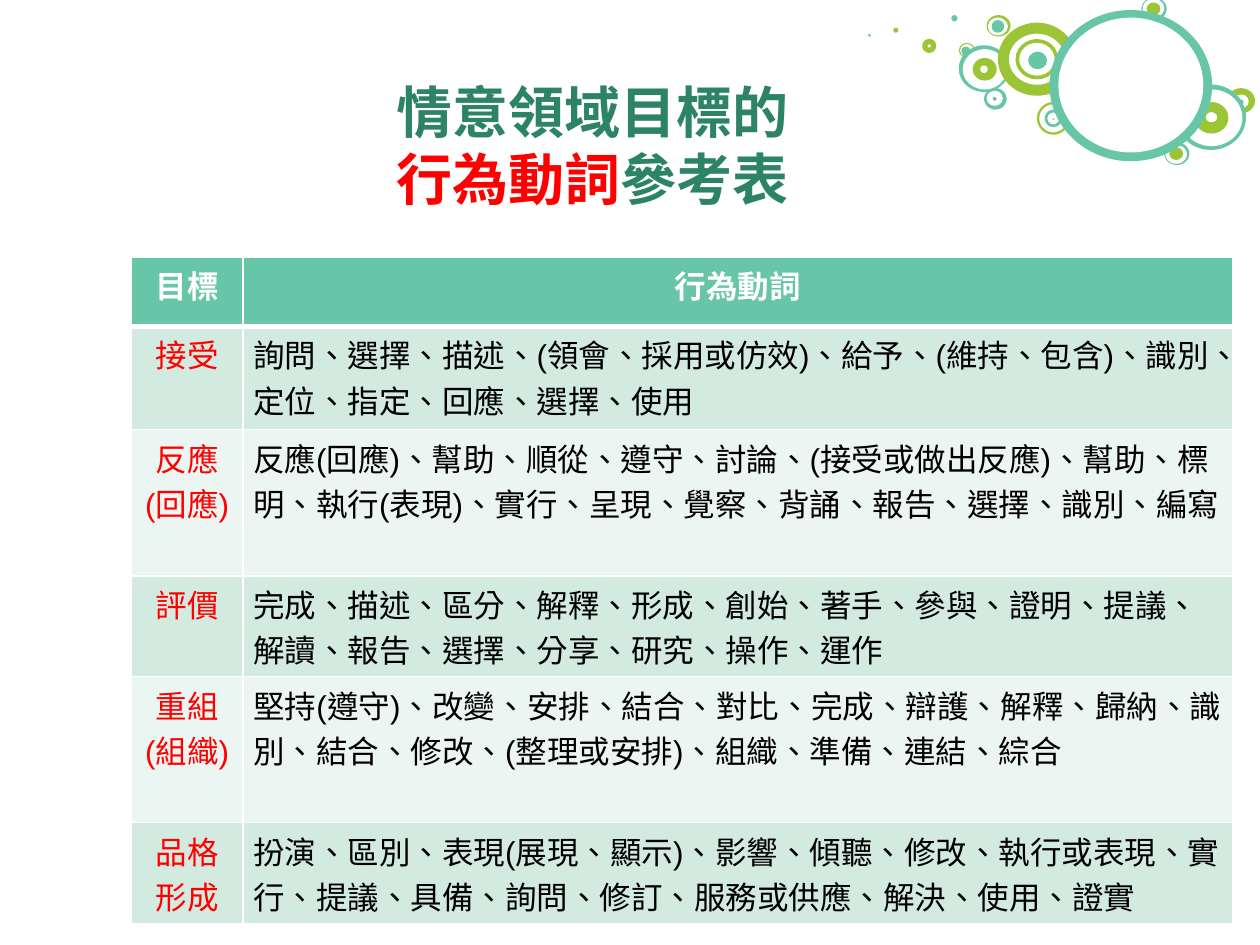
from lxml.etree import SubElement
from pptx import Presentation
from pptx.dml.color import RGBColor
from pptx.enum.lang import MSO_LANGUAGE_ID
from pptx.enum.shapes import MSO_SHAPE
from pptx.enum.text import MSO_ANCHOR, PP_ALIGN
from pptx.oxml.ns import qn
from pptx.util import Inches, Pt

TEAL, LIME, WHITE, RED = "67C5A8", "9CC535", "FFFFFF", "FF0000"
GREEN, BLACK = "2D8366", "000000"
CJK_FONT = "Noto Sans CJK SC"


def rgb(value):
    return RGBColor.from_string(value)


def add_run(p, text, color, **formats):
    """Append a run, with the same typeface settings for its Chinese characters."""
    r = p.add_run()
    r.text = text
    r.font.color.rgb = rgb(color)
    r.font.language_id = MSO_LANGUAGE_ID.TRADITIONAL_CHINESE
    for name, value in formats.items():
        setattr(r.font, name, value)
    SubElement(r.font._element, qn("a:ea"), typeface=CJK_FONT)


prs = Presentation()
prs.slide_width, prs.slide_height = Inches(10), Inches(7.5)
s = prs.slides.add_slide(prs.slide_layouts[6])

# Circle decoration: left, top, width, height, colour and, for rings, thickness ratio
circles = [
    (9.06, -0.02, 0.2, 0.18, TEAL), (9.07, -0.01, 0.17, 0.15, WHITE),
    (9.1, 0.02, 0.11, 0.1, LIME),
    (7.55, 0.12, 0.05, 0.05, TEAL), (7.09, 0.22, 0.04, 0.04, LIME),
    (6.89, 0.27, 0.02, 0.02, TEAL),
    (7.61, 0.34, 0.13, 0.12, LIME), (7.62, 0.35, 0.11, 0.1, WHITE),
    (7.63, 0.37, 0.07, 0.07, TEAL),
    (7.81, 0.7, 0.18, 0.17, TEAL), (7.83, 0.72, 0.13, 0.12, WHITE),
    (7.88, 0.77, 0.03, 0.03, TEAL),
    (7.61, 0.36, 0.4, 0.37, TEAL), (7.64, 0.39, 0.35, 0.32, WHITE),
    (7.72, 0.46, 0.19, 0.18, LIME), (7.78, 0.52, 0.06, 0.06, WHITE),
    (9.74, 0.7, 0.22, 0.2, LIME), (9.79, 0.75, 0.12, 0.11, WHITE),
    (9.83, 0.79, 0.04, 0.04, TEAL),
    (9.33, 0.67, 0.56, 0.52, TEAL), (9.37, 0.71, 0.49, 0.45, WHITE),
    (9.48, 0.81, 0.27, 0.25, LIME), (9.57, 0.89, 0.09, 0.08, WHITE),
    (8.23, 0.81, 0.26, 0.26, LIME, 0.07), (8.29, 0.87, 0.14, 0.14, TEAL, 0.16),
    (8.35, 0.94, 0.02, 0.01, LIME),
    (7.98, 0.26, 0.49, 0.46, WHITE),
    (7.92, 0.18, 0.62, 0.58, LIME, 0.15), (8.06, 0.31, 0.34, 0.32, LIME, 0.09),
    (8.16, 0.41, 0.15, 0.14, TEAL),
    (9.24, 1.13, 0.2, 0.18, TEAL), (9.25, 1.15, 0.17, 0.15, WHITE),
    (9.28, 1.17, 0.11, 0.1, LIME),
    (7.83, 0.12, 0.19, 0.17, LIME), (7.84, 0.14, 0.16, 0.14, WHITE),
    (7.87, 0.16, 0.1, 0.1, TEAL),
    (8.33, 0.08, 1.29, 1.2, TEAL), (8.4, 0.14, 1.15, 1.07, WHITE),
]
decoration = s.shapes.add_group_shape()
for x, y, w, h, color, *ring in circles:
    kind = MSO_SHAPE.DONUT if ring else MSO_SHAPE.OVAL
    sp = decoration.shapes.add_shape(kind, Inches(x), Inches(y), Inches(w), Inches(h))
    sp.shadow.inherit = False
    sp.fill.solid()
    sp.fill.fore_color.rgb = rgb(color)
    sp.line.fill.background()
    if ring:
        sp.adjustments[0] = ring[0]

outline = decoration.shapes.add_shape(
    MSO_SHAPE.OVAL, Inches(7.34), Inches(0.33), Inches(0.07), Inches(0.07))
outline.shadow.inherit = False
outline.fill.background()
outline.line.color.rgb = rgb(LIME)
outline.line.width = Pt(3)

# Title
title = s.shapes.add_textbox(Inches(1.04), Inches(0.52), Inches(7.33), Inches(1.25))
tf = title.text_frame
tf.word_wrap = True
tf.vertical_anchor = MSO_ANCHOR.MIDDLE
p = tf.paragraphs[0]
p.alignment = PP_ALIGN.CENTER
title_format = {"size": Pt(32), "bold": True, "name": CJK_FONT}
add_run(p, "情意領域目標的", GREEN, **title_format)
p.add_line_break()
add_run(p, "行為動詞", RED, **title_format)
add_run(p, "參考表", GREEN, **title_format)

# Table of verbs for each objective
rows = [
    ("目標", "行為動詞"),
    ("接受", "詢問、選擇、描述、(領會、採用或仿效)、給予、(維持、包含)、識別、定位、指定、回應、選擇、使用"),
    ("反應\n(回應)", "反應(回應)、幫助、順從、遵守、討論、(接受或做出反應)、幫助、標明、執行(表現)、"
     "實行、呈現、覺察、背誦、報告、選擇、識別、編寫"),
    ("評價", "完成、描述、區分、解釋、形成、創始、著手、參與、證明、提議、解讀、報告、選擇、分享、研究、操作、運作"),
    ("重組\n(組織)", "堅持(遵守)、改變、安排、結合、對比、完成、辯護、解釋、歸納、識別、結合、修改、"
     "(整理或安排)、組織、準備、連結、綜合"),
    ("品格形成", "扮演、區別、表現(展現、顯示)、影響、傾聽、修改、執行或表現、實行、提議、具備、詢問、"
     "修訂、服務或供應、解決、使用、證實"),
]
table = s.shapes.add_table(
    len(rows), 2, Inches(1.04), Inches(2.04), Inches(8.74), Inches(5.29)).table
for column, width in zip(table.columns, (0.89, 7.85)):
    column.width = Inches(width)
for row, height in zip(table.rows, (0.55, 0.82, 1.16, 0.8, 1.16, 0.8)):
    row.height = Inches(height)

margins = {"margin_left": 0.08, "margin_right": 0.08, "margin_top": 0.04, "margin_bottom": 0.04}
for i, texts in enumerate(rows):
    header = i == 0
    fill = TEAL if header else ("D3EAE1" if i % 2 else "EBF5F1")
    for j, text in enumerate(texts):
        cell = table.cell(i, j)
        for name, value in margins.items():
            setattr(cell, name, Inches(value))
        border_widths = {"L": 1, "R": 1, "T": 3 if i == 1 else 1, "B": 3 if header else 1}
        for side, width in border_widths.items():
            ln = SubElement(cell._tc.get_or_add_tcPr(), qn(f"a:ln{side}"), w=str(Pt(width)))
            SubElement(SubElement(ln, qn("a:solidFill")), qn("a:srgbClr"), val=WHITE)
        cell.fill.solid()
        cell.fill.fore_color.rgb = rgb(fill)
        color = WHITE if header else (BLACK if j else RED)
        tf = cell.text_frame
        for n, line in enumerate(text.split("\n")):
            p = tf.add_paragraph() if n else tf.paragraphs[0]
            if header or j == 0:
                p.alignment = PP_ALIGN.CENTER
            elif i == 4:
                p.alignment = PP_ALIGN.JUSTIFY
            add_run(p, line, color, size=Pt(18), bold=header, name="Arial")

prs.save("out.pptx")
